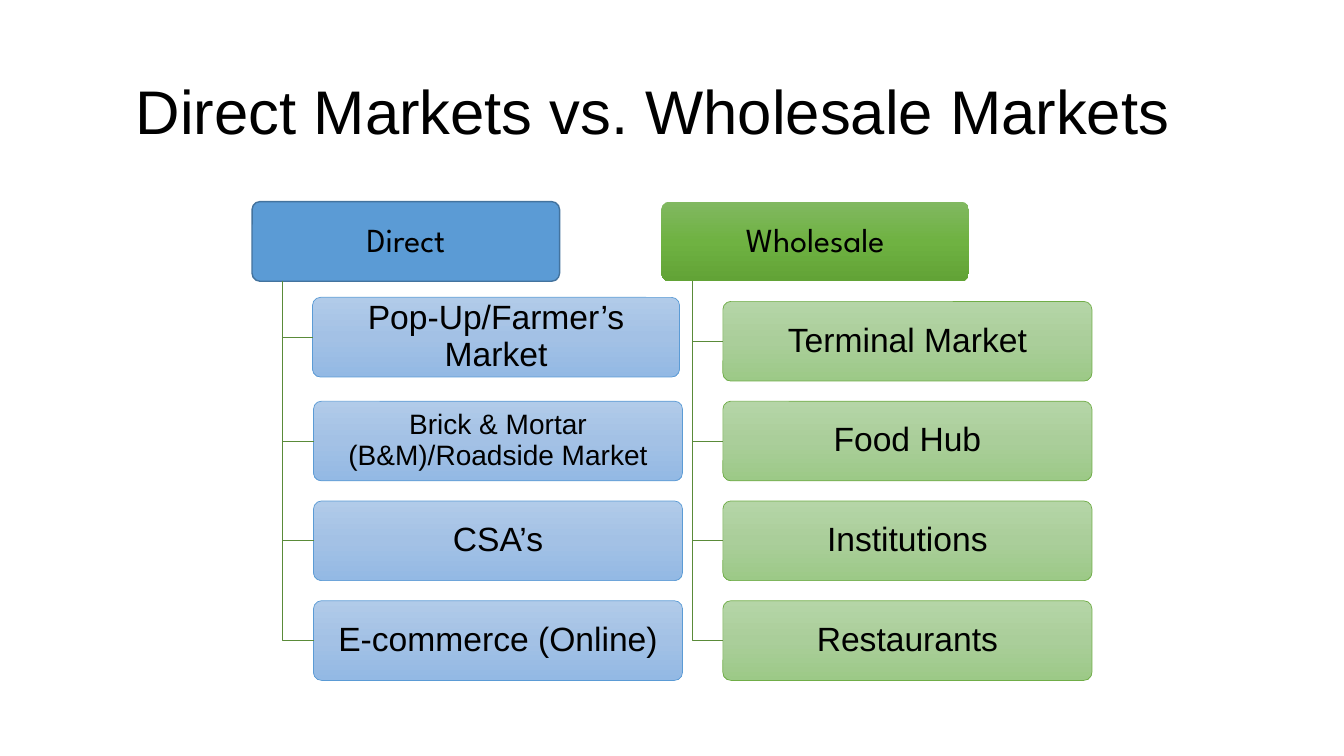
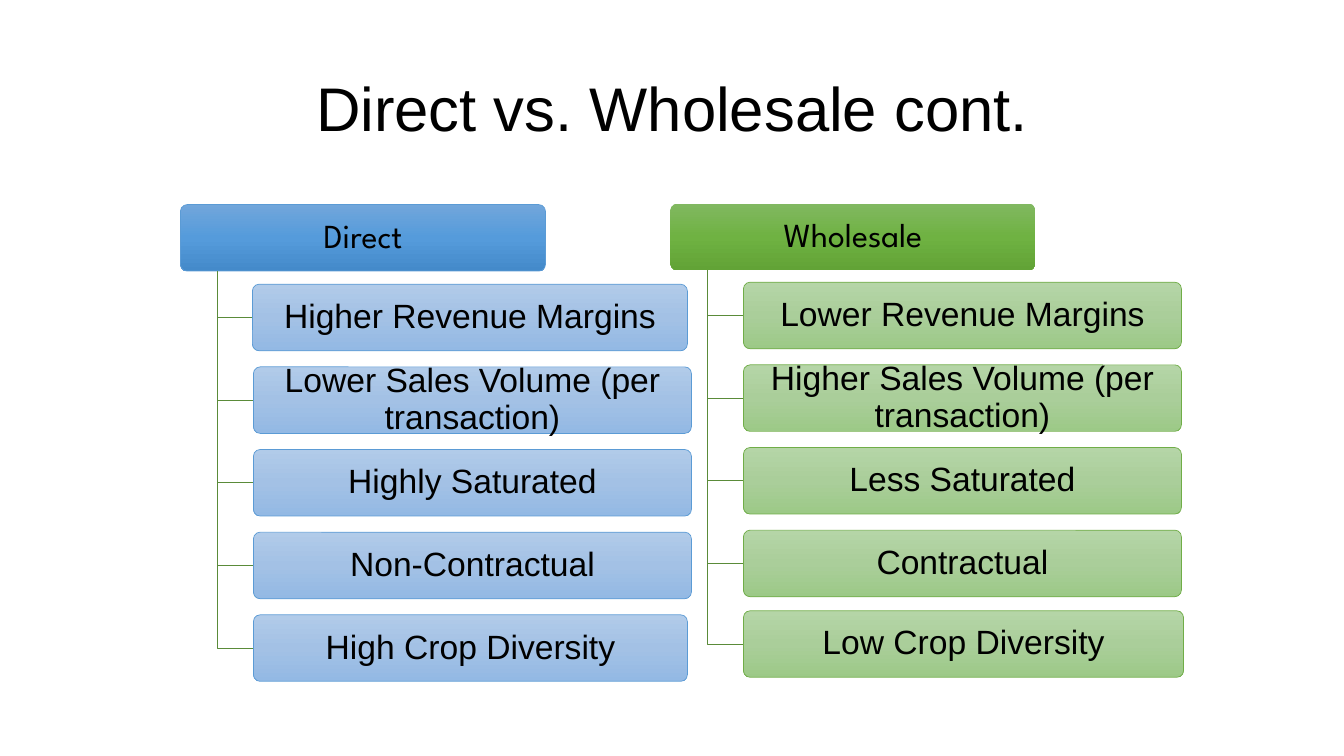
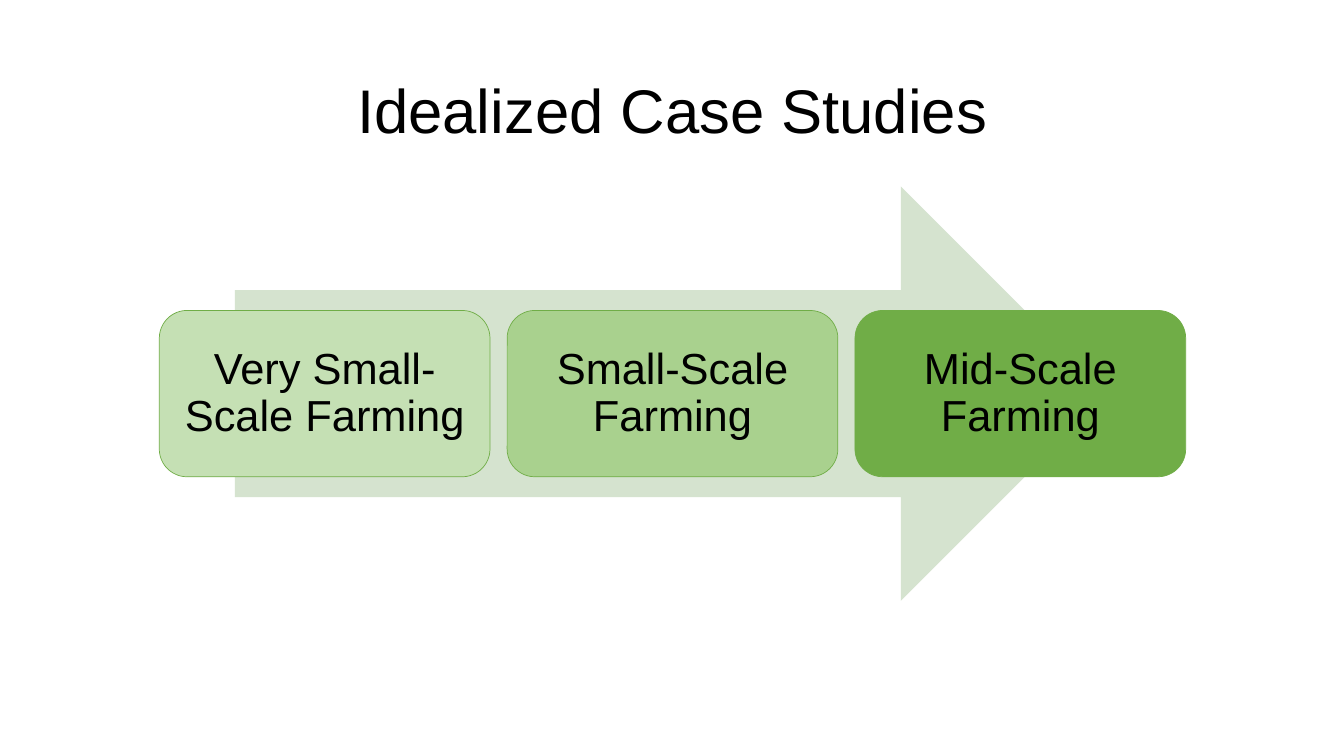
import copy
import dataclasses

import pptx
import pptx.dml.color
import pptx.enum.shapes
import pptx.enum.text
import pptx.oxml.ns
import pptx.util

Inches = pptx.util.Inches
Pt = pptx.util.Pt
RGBColor = pptx.dml.color.RGBColor
Shape = pptx.enum.shapes.MSO_SHAPE

BLACK = RGBColor(0x00, 0x00, 0x00)
BLUE = RGBColor(0x5B, 0x9B, 0xD5)
BLUE_EDGE = RGBColor(0x43, 0x73, 0x9E)
BLUE_HEAD = (RGBColor(0x71, 0xA6, 0xDB), RGBColor(0x55, 0x9B, 0xDB), RGBColor(0x44, 0x8A, 0xCA))
BLUE_ENTRY = (RGBColor(0xB1, 0xCB, 0xE9), RGBColor(0xA3, 0xC1, 0xE5), RGBColor(0x93, 0xB9, 0xE4))
GREEN = RGBColor(0x70, 0xAD, 0x47)
GREEN_HEAD = (RGBColor(0x81, 0xB8, 0x61), RGBColor(0x6F, 0xB2, 0x42), RGBColor(0x62, 0xA3, 0x36))
GREEN_ENTRY = (RGBColor(0xB5, 0xD5, 0xA7), RGBColor(0xAA, 0xCE, 0x9A), RGBColor(0x9C, 0xC9, 0x87))
GREEN_BRANCH = RGBColor(0x5A, 0x8B, 0x39)
GREEN_ARROW = RGBColor(0xD5, 0xE3, 0xCF)
GREEN_PALE = RGBColor(0xC5, 0xE0, 0xB4)
GREEN_SOFT = RGBColor(0xA9, 0xD1, 0x8E)


@dataclasses.dataclass
class Entry:
    text: str
    size: int = 24
    shift: float = 0
    drop: float = 0
    widen: float = 0


@dataclasses.dataclass
class Column:
    left: float
    top: float
    width: float
    height: float
    first: float
    step: float


class MarketDeck:
    """Holds the shared style and the slide being built."""

    body_font = "Arial"
    head_font = "League Spartan"

    def __init__(self):
        self.deck = pptx.Presentation()
        self.deck.slide_width = Inches(13.33)
        self.deck.slide_height = Inches(7.5)
        self.page = None

    def start(self, title, left, top, height):
        self.page = self.deck.slides.add_slide(self.deck.slide_layouts[6])
        box = self.page.shapes.add_textbox(Inches(left), Inches(top), Inches(11.5), Inches(height))
        self.label(box, title, 44, self.body_font)

    def label(self, box, text, size, font, margins=(0.1, 0.05)):
        frame = box.text_frame
        frame.word_wrap = True
        frame.vertical_anchor = pptx.enum.text.MSO_ANCHOR.MIDDLE
        frame.margin_left = frame.margin_right = Inches(margins[0])
        frame.margin_top = frame.margin_bottom = Inches(margins[1])
        para = frame.paragraphs[0]
        para.text = text
        para.alignment = pptx.enum.text.PP_ALIGN.CENTER
        para.line_spacing = 0.9
        para.font.size = Pt(size)
        para.font.name = font
        para.font.color.rgb = BLACK

    def blend(self, shape, colors):
        shape.fill.gradient()
        shape.fill.gradient_angle = 270
        stops = shape._element.spPr.find(".//" + pptx.oxml.ns.qn("a:gsLst"))
        stops.insert(1, copy.deepcopy(stops[0]))
        for stop, color, position in zip(shape.fill.gradient_stops, colors, (0, 0.5, 1)):
            stop.color.rgb = color
            stop.position = position

    def shape(self, kind, left, top, width, height, fill, edge=None, weight=0.5):
        shape = self.page.shapes.add_shape(
            kind, Inches(left), Inches(top), Inches(width), Inches(height))
        shape.shadow.inherit = False
        if isinstance(fill, RGBColor):
            shape.fill.solid()
            shape.fill.fore_color.rgb = fill
        else:
            self.blend(shape, fill)
        if edge is None:
            shape.line.fill.background()
        else:
            shape.line.color.rgb = edge
            shape.line.width = Pt(weight)
        return shape

    def card(self, text, size, font, *look):
        card = self.shape(Shape.ROUNDED_RECTANGLE, *look)
        card.adjustments[0] = 0.1
        self.label(card, text, size, font, (0.05, 0.03))
        return card

    def branch(self, head, card):
        trunk = head.left + head.width // 10
        middle = card.top + card.height // 2
        builder = self.page.shapes.build_freeform(trunk, head.top + head.height)
        builder.add_line_segments([(trunk, middle), (card.left, middle)], close=False)
        elbow = builder.convert_to_shape()
        elbow.shadow.inherit = False
        elbow.fill.background()
        elbow.line.color.rgb = GREEN_BRANCH
        elbow.line.width = Pt(0.5)

    def column(self, heading, place, head_look, entry_look, entries):
        head = self.card(heading, 24, self.head_font,
                         place.left, place.top, place.width, place.height, *head_look)
        for row, entry in enumerate(entries):
            card = self.card(entry.text, entry.size, self.body_font,
                             place.left + 0.2 * place.width + entry.shift,
                             place.first + row * place.step + entry.drop,
                             1.2 * place.width + entry.widen, place.height, *entry_look)
            self.branch(head, card)

    def stages(self, stages):
        self.shape(Shape.RIGHT_ARROW, 2.33, 1.85, 8.66, 4.11, GREEN_ARROW)
        for index, (text, fill) in enumerate(stages):
            stage = self.shape(Shape.ROUNDED_RECTANGLE, 1.58 + index * 3.45, 3.08,
                               3.28, 1.65, fill, GREEN)
            self.label(stage, text, 31, self.body_font, (0.13, 0.13))


def main():
    market = MarketDeck()
    blue_entry = (BLUE_ENTRY, BLUE)
    green_entry = (GREEN_ENTRY, GREEN)

    market.start("Direct Markets vs. Wholesale Markets", 0.73, 0.5, 1.27)
    market.column("Direct", Column(2.5, 2, 3.05, 0.79, 2.99, 0.99),
                  (BLUE, BLUE_EDGE, 1), blue_entry, [
                      Entry("Pop-Up/Farmer’s Market", shift=-0.01, drop=-0.04, widen=-0.02),
                      Entry("Brick & Mortar (B&M)/Roadside Market", size=20),
                      Entry("CSA’s"),
                      Entry("E-commerce (Online)")])
    market.column("Wholesale", Column(6.56, 2, 3.05, 0.79, 2.99, 0.99),
                  (GREEN_HEAD,), green_entry, [
                      Entry("Terminal Market"),
                      Entry("Food Hub"),
                      Entry("Institutions"),
                      Entry("Restaurants")])

    market.start("Direct vs. Wholesale cont.", 0.92, 0.48, 1.26)
    market.column("Direct", Column(1.79, 2.03, 3.62, 0.66, 2.82, 0.82),
                  (BLUE_HEAD, BLUE), blue_entry, [
                      Entry("Higher Revenue Margins", shift=-0.01, widen=-0.03),
                      Entry("Lower Sales Volume (per transaction)"),
                      Entry("Highly Saturated"),
                      Entry("Non-Contractual"),
                      Entry("High Crop Diversity", widen=-0.04)])
    market.column("Wholesale", Column(6.65, 2.02, 3.62, 0.66, 2.8, 0.82),
                  (GREEN_HEAD,), green_entry, [
                      Entry("Lower Revenue Margins"),
                      Entry("Higher Sales Volume (per transaction)"),
                      Entry("Less Saturated"),
                      Entry("Contractual"),
                      Entry("Low Crop Diversity", drop=-0.02, widen=0.02)])

    market.start("Idealized Case Studies", 0.92, 0.4, 1.45)
    market.stages([("Very Small-Scale Farming", GREEN_PALE),
                   ("Small-Scale Farming", GREEN_SOFT),
                   ("Mid-Scale Farming", GREEN)])

    market.deck.save("out.pptx")


if __name__ == "__main__":
    main()
